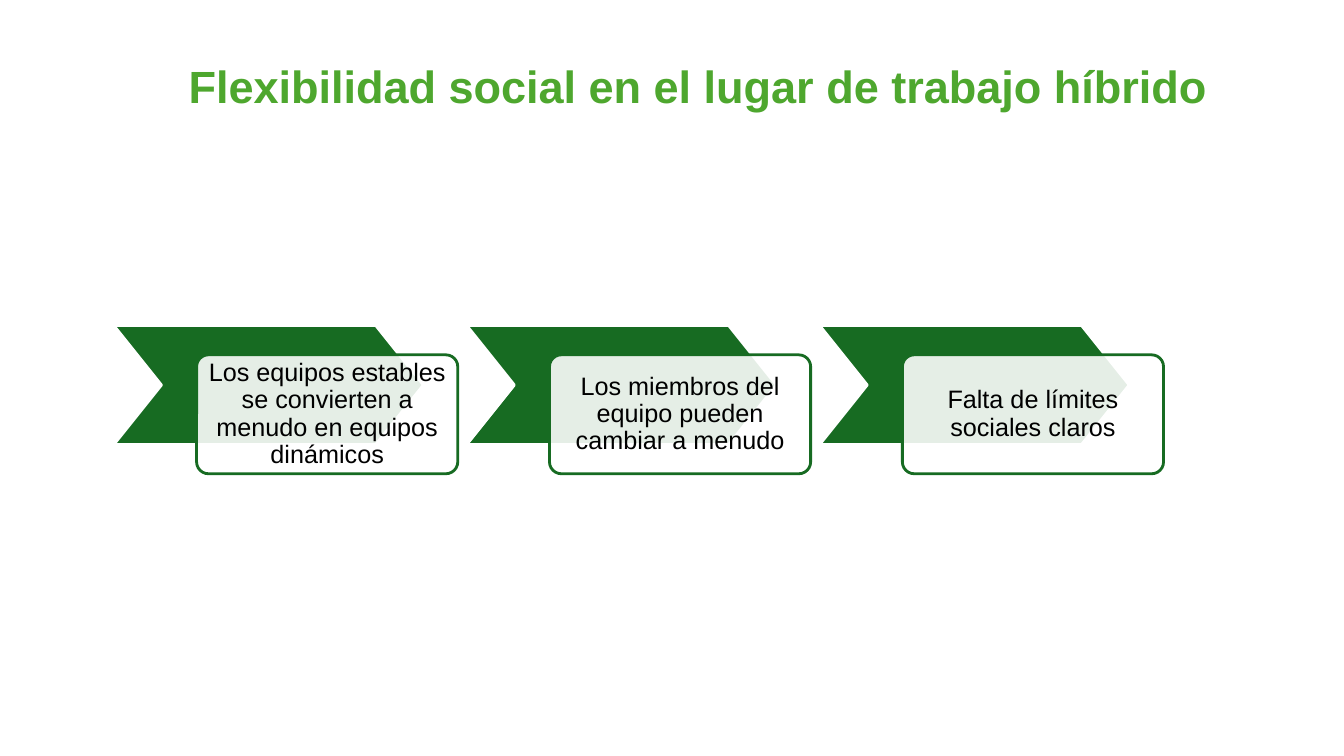
from dataclasses import dataclass

import lxml.etree
import pptx
import pptx.dml.color
import pptx.enum.shapes
import pptx.enum.text
import pptx.oxml.ns
import pptx.presentation
import pptx.shapes.autoshape
import pptx.slide
import pptx.text.text
import pptx.util

Inches = pptx.util.Inches
RGBColor = pptx.dml.color.RGBColor
Align = pptx.enum.text.PP_ALIGN
Preset = pptx.enum.shapes.MSO_SHAPE

TITLE_GREEN = RGBColor(0x4E, 0xA7, 0x2E)
DARK_GREEN = RGBColor(0x17, 0x6B, 0x22)
WHITE = RGBColor(0xFF, 0xFF, 0xFF)
BLACK = RGBColor(0x00, 0x00, 0x00)

FONT = "Arial"
FIRST_LEFT = 1.13
STEP_PITCH = 3.5
CHEVRON_TOP = 3.23
CARD_OFFSET_X = 0.82
CARD_OFFSET_Y = 0.29
STEP_HEIGHT = 1.18
CARD_OPACITY = 89


@dataclass(frozen=True)
class ShapeStyle:
    preset: Preset
    width: float
    adjustment: float
    fill: RGBColor
    line: RGBColor


CHEVRON = ShapeStyle(Preset.CHEVRON, 3.07, 0.4, DARK_GREEN, WHITE)
CARD = ShapeStyle(Preset.ROUNDED_RECTANGLE, 2.59, 0.1, WHITE, DARK_GREEN)

STEPS = (
    "Los equipos estables se convierten a menudo en equipos dinámicos",
    "Los miembros del equipo pueden cambiar a menudo",
    "Falta de límites sociales claros",
)


def write_text(frame: pptx.text.text.TextFrame, text: str, *, size: float,
               color: RGBColor, bold: bool = False, align: Align = Align.LEFT,
               line_spacing: float = 1.0, inset_x: float = 0.1,
               inset_y: float = 0.05) -> None:
    frame.word_wrap = True
    frame.auto_size = pptx.enum.text.MSO_AUTO_SIZE.NONE
    frame.vertical_anchor = pptx.enum.text.MSO_ANCHOR.MIDDLE
    frame.margin_left = frame.margin_right = Inches(inset_x)
    frame.margin_top = frame.margin_bottom = Inches(inset_y)
    paragraph = frame.paragraphs[0]
    paragraph.alignment = align
    paragraph.line_spacing = line_spacing
    paragraph.space_before = pptx.util.Pt(0)
    run = paragraph.add_run()
    run.text = text
    run.font.name = FONT
    run.font.size = pptx.util.Pt(size)
    run.font.bold = bold
    run.font.color.rgb = color


def add_styled_shape(slide: pptx.slide.Slide, style: ShapeStyle, left: float,
                     top: float) -> pptx.shapes.autoshape.Shape:
    shape = slide.shapes.add_shape(style.preset, Inches(left), Inches(top),
                                   Inches(style.width), Inches(STEP_HEIGHT))
    shape.adjustments[0] = style.adjustment
    shape.shadow.inherit = False
    shape.fill.solid()
    shape.fill.fore_color.rgb = style.fill
    shape.line.color.rgb = style.line
    shape.line.width = pptx.util.Pt(2)
    return shape


def set_fill_opacity(shape: pptx.shapes.autoshape.Shape, percent: int) -> None:
    qn = pptx.oxml.ns.qn
    color = shape.fill._xPr.find(qn("a:solidFill")).find(qn("a:srgbClr"))
    lxml.etree.SubElement(color, qn("a:alpha"), val=str(percent * 1000))


def add_title(slide: pptx.slide.Slide) -> None:
    title = slide.shapes.title
    title.left, title.top = Inches(1.77), Inches(0.46)
    title.width, title.height = Inches(11.46), Inches(0.78)
    write_text(title.text_frame, "Flexibilidad social en el lugar de trabajo híbrido",
               size=32.2, color=TITLE_GREEN, bold=True)


def add_step(slide: pptx.slide.Slide, text: str, left: float) -> None:
    add_styled_shape(slide, CHEVRON, left, CHEVRON_TOP)
    card = add_styled_shape(slide, CARD, left + CARD_OFFSET_X,
                            CHEVRON_TOP + CARD_OFFSET_Y)
    set_fill_opacity(card, CARD_OPACITY)
    write_text(card.text_frame, text, size=18, color=BLACK, align=Align.CENTER,
               line_spacing=0.9, inset_x=0.06)


def main() -> None:
    presentation = pptx.Presentation()
    presentation.slide_width = Inches(13.33)
    presentation.slide_height = Inches(7.5)
    slide = presentation.slides.add_slide(presentation.slide_layouts[5])

    # Title
    add_title(slide)

    # Chevron process, one card on each arrow
    for index, text in enumerate(STEPS):
        add_step(slide, text, FIRST_LEFT + index * STEP_PITCH)

    presentation.save("out.pptx")


if __name__ == "__main__":
    main()
